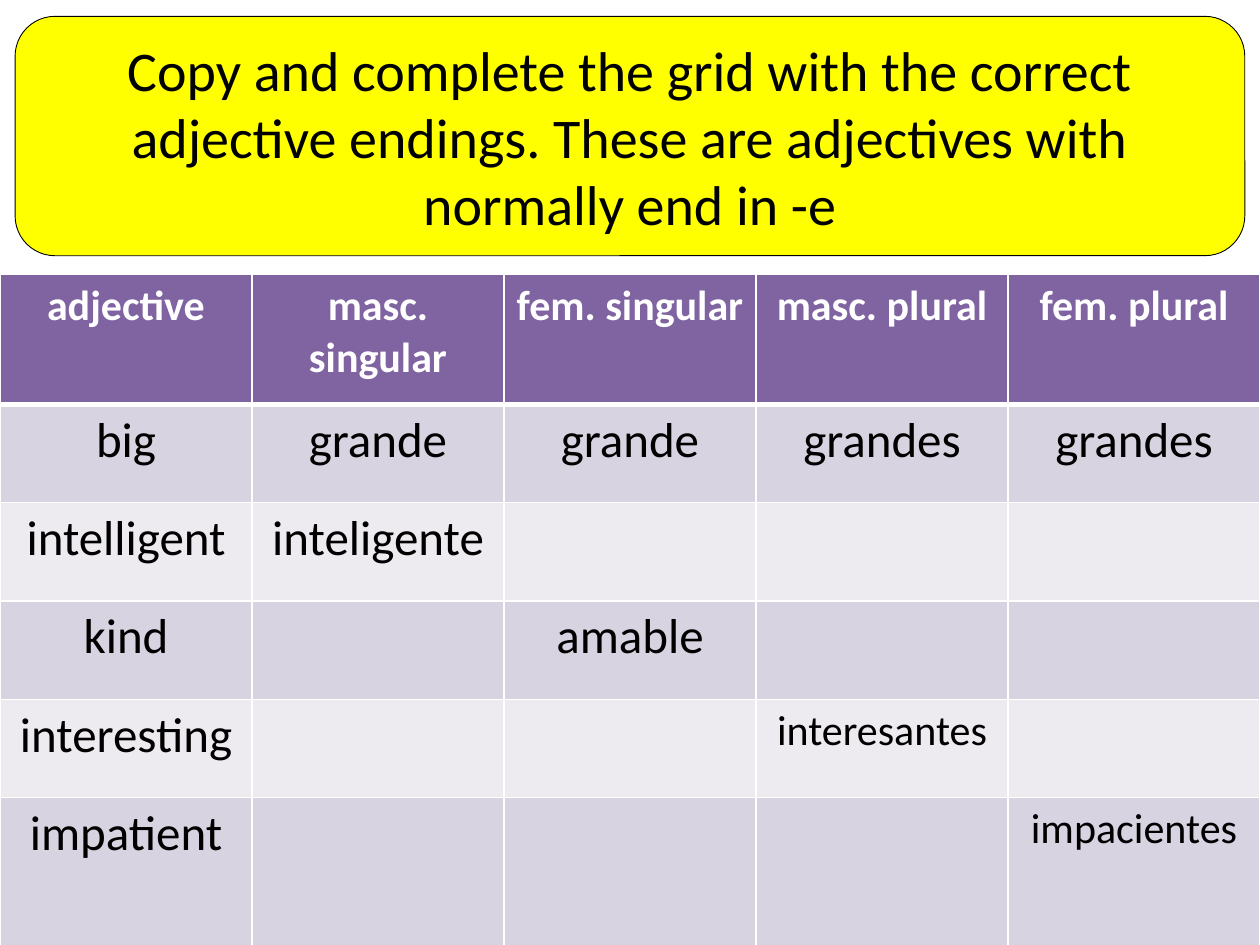
from dataclasses import dataclass

from lxml import etree
from pptx import Presentation
from pptx.dml.color import RGBColor
from pptx.enum.shapes import MSO_SHAPE
from pptx.enum.text import MSO_ANCHOR, PP_ALIGN
from pptx.oxml.ns import qn
from pptx.util import Inches, Pt

ROUNDED = MSO_SHAPE.ROUNDED_RECTANGLE
CENTER = PP_ALIGN.CENTER
MIDDLE = MSO_ANCHOR.MIDDLE


@dataclass(frozen=True)
class Theme:
    font: str = "Calibri"
    black: str = "000000"
    white: str = "FFFFFF"
    yellow: str = "FFFF00"
    purple: str = "8064A2"
    bands: tuple = ("D8D3E0", "EDEAF0")
    title_size: int = 32
    body_size: int = 28
    small_size: int = 24


theme = Theme()


def write_text(text_frame, text, size, color, bold=False):
    paragraph = text_frame.paragraphs[0]
    paragraph.alignment = CENTER
    run = paragraph.add_run()
    run.text = text
    run.font.name = theme.font
    run.font.size = Pt(size)
    run.font.bold = bold
    run.font.color.rgb = RGBColor.from_string(color)


def set_borders(cell, top, bottom):
    properties = cell._tc.get_or_add_tcPr()
    widths = {"a:lnL": 1, "a:lnR": 1, "a:lnT": top, "a:lnB": bottom}
    for position, (tag, width) in enumerate(widths.items()):
        line = etree.Element(qn(tag), w=str(Pt(width)))
        fill = etree.SubElement(line, qn("a:solidFill"))
        etree.SubElement(fill, qn("a:srgbClr"), val=theme.white)
        properties.insert(position, line)


presentation = Presentation()
presentation.slide_width = Inches(10)
presentation.slide_height = Inches(7.5)
slide = presentation.slides.add_slide(presentation.slide_layouts[6])

# Adjective grid
grid = [
    ["adjective", "masc. singular", "fem. singular", "masc. plural", "fem. plural"],
    ["big", "grande", "grande", "grandes", "grandes"],
    ["intelligent", "inteligente", "", "", ""],
    ["kind", "", "amable", "", ""],
    ["interesting", "", "", "interesantes", ""],
    ["impatient", "", "", "", "impacientes"],
]
long_words = {"interesantes", "impacientes"}
row_heights = [1.03] + [0.78] * 4 + [1.19]

table = slide.shapes.add_table(
    len(grid), len(grid[0]), Inches(0), Inches(2.18), Inches(10), Inches(sum(row_heights))
).table
for column in table.columns:
    column.width = Inches(2)

for row_index, words in enumerate(grid):
    table.rows[row_index].height = Inches(row_heights[row_index])
    is_header = row_index == 0
    fill_color = theme.purple if is_header else theme.bands[(row_index - 1) % 2]
    text_color = theme.white if is_header else theme.black
    for column_index, word in enumerate(words):
        cell = table.cell(row_index, column_index)
        cell.fill.solid()
        cell.fill.fore_color.rgb = RGBColor.from_string(fill_color)
        set_borders(cell, top=3 if row_index == 1 else 1, bottom=3 if is_header else 1)
        if word:
            is_small = is_header or word in long_words
            size = theme.small_size if is_small else theme.body_size
            write_text(cell.text_frame, word, size, text_color, is_header)

# Instruction banner
banner = slide.shapes.add_shape(ROUNDED, Inches(0.12), Inches(0.13), Inches(9.76), Inches(1.9))
banner.shadow.inherit = False
banner.fill.solid()
banner.fill.fore_color.rgb = RGBColor.from_string(theme.yellow)
banner.line.color.rgb = RGBColor.from_string(theme.black)
banner.line.width = Pt(0.5)
banner.text_frame.word_wrap = True
banner.text_frame.vertical_anchor = MIDDLE
write_text(
    banner.text_frame,
    "Copy and complete the grid with the correct adjective endings. "
    "These are adjectives with normally end in -e",
    theme.title_size,
    theme.black,
)

presentation.save("out.pptx")
